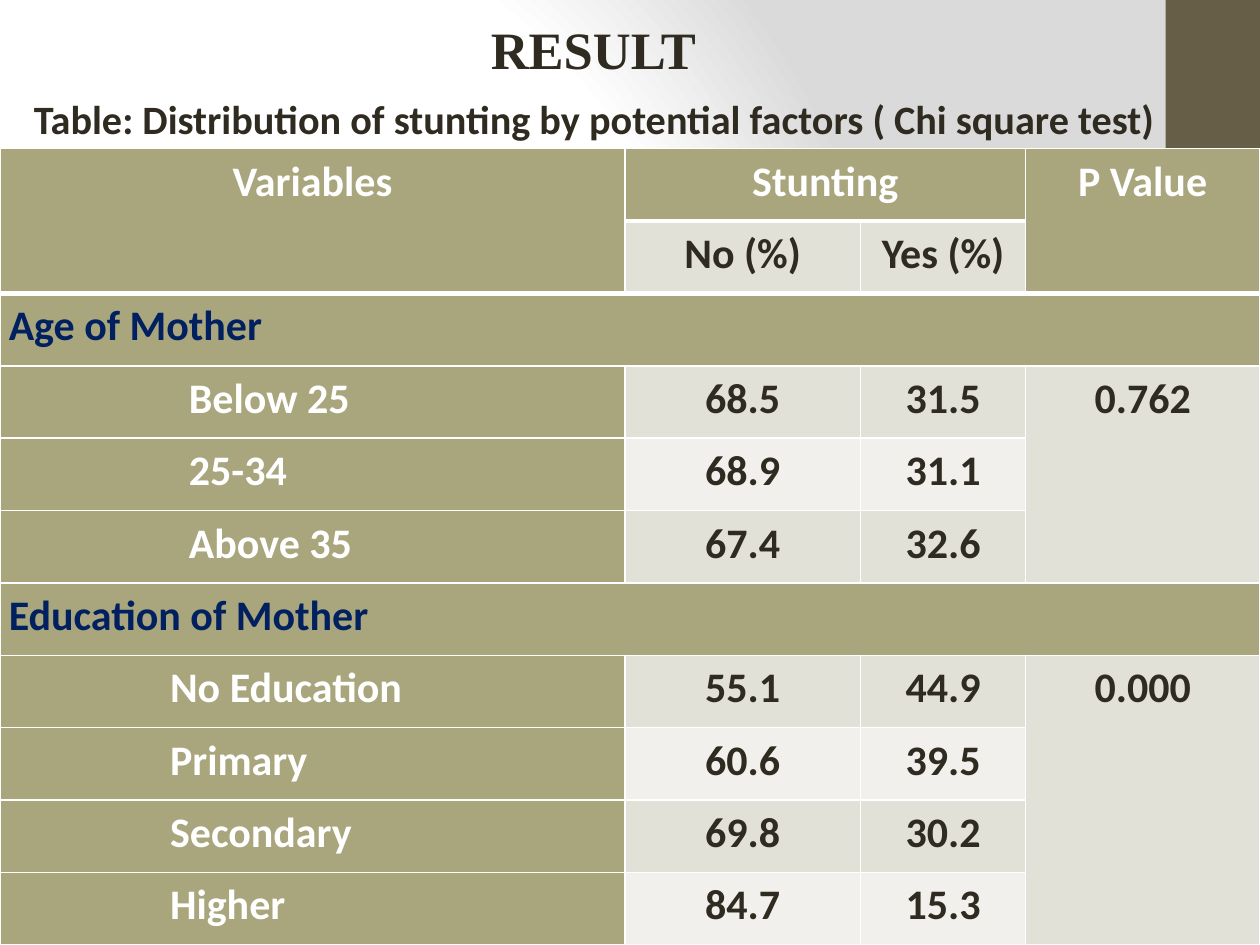
from lxml import etree
from pptx import Presentation
from pptx.dml.color import RGBColor
from pptx.enum.shapes import MSO_SHAPE
from pptx.enum.text import MSO_AUTO_SIZE, PP_ALIGN
from pptx.oxml import parse_xml
from pptx.oxml.ns import nsdecls, qn
from pptx.util import Inches, Pt

WIDTH, HEIGHT = Inches(10), Inches(7.5)
WHITE = RGBColor(0xFF, 0xFF, 0xFF)
MIST = RGBColor(0xDA, 0xDA, 0xDA)
BROWN = RGBColor(0x67, 0x5E, 0x47)
OLIVE = RGBColor(0xA9, 0xA5, 0x7C)
NAVY = RGBColor(0x00, 0x20, 0x60)
INK = RGBColor(0x2F, 0x2B, 0x20)
BAND_DARK = RGBColor(0xE2, 0xE1, 0xD7)
BAND_LIGHT = RGBColor(0xF1, 0xF0, 0xEC)

COLUMN_WIDTHS = (4.96, 1.87, 1.31, 1.86)
TABLE_TOP = 1.18 / 7.5
AGE_INDENT, EDUCATION_INDENT = Inches(1.43), Inches(1.28)
HEADER_ROWS = [
    ("Variables", "Stunting", "", "P Value"),
    ("", "No (%)", "Yes (%)", ""),
]
# heading, indent of its categories, p value, category rows
FACTORS = [
    ("Age of Mother", AGE_INDENT, "0.762", [
        ("Below 25", "68.5", "31.5"),
        ("25-34", "68.9", "31.1"),
        ("Above 35", "67.4", "32.6"),
    ]),
    ("Education of Mother", EDUCATION_INDENT, "0.000", [
        ("No Education", "55.1", "44.9"),
        ("Primary", "60.6", "39.5"),
        ("Secondary", "69.8", "30.2"),
        ("Higher", "84.7", "15.3"),
    ]),
]


def share(left, top, width, height):
    """Turn shares of the slide into lengths."""
    return (int(left * WIDTH), int(top * HEIGHT),
            int(width * WIDTH), int(height * HEIGHT))


def set_background(page):
    stops = "".join(
        f'<a:gs pos="{place * 1000}"><a:srgbClr val="{color}"/></a:gs>'
        for place, color in ((0, WHITE), (75, WHITE), (100, MIST)))
    background = parse_xml(
        f'<p:bg {nsdecls("p", "a")}><p:bgPr><a:gradFill rotWithShape="1">'
        f'<a:gsLst>{stops}</a:gsLst><a:path path="circle">'
        '<a:fillToRect l="20000" t="50000" r="100000" b="50000"/></a:path>'
        '</a:gradFill><a:effectLst/></p:bgPr></p:bg>')
    page.element.cSld.insert(0, background)


def add_side_bar(page):
    bar = page.shapes.add_shape(MSO_SHAPE.RECTANGLE, *share(0.925, 0, 0.075, 1))
    bar.shadow.inherit = False
    bar.fill.solid()
    bar.fill.fore_color.rgb = BROWN
    bar.line.fill.background()


def style_text(para, size, font, color, align):
    para.alignment = align
    for span in para.runs:
        span.font.size = Pt(size)
        span.font.name = font
        span.font.bold = True
        span.font.color.rgb = color


def add_label(page, area, text, size, font, align):
    box = page.shapes.add_textbox(*share(*area))
    box.text_frame.word_wrap = True
    box.text_frame.text = text
    style_text(box.text_frame.paragraphs[0], size, font, INK, align)
    return box.text_frame


def set_borders(cell, bottom):
    properties = cell._tc.get_or_add_tcPr()
    for side, points in (("L", 1), ("R", 1), ("T", 1), ("B", bottom)):
        line = etree.SubElement(properties, qn(f"a:ln{side}"), w=str(Pt(points)))
        fill = etree.SubElement(line, qn("a:solidFill"))
        etree.SubElement(fill, qn("a:srgbClr"), val=str(WHITE))


def fill_cell(cell, text, fill, color, align=PP_ALIGN.CENTER, indent=0, bottom=1):
    set_borders(cell, bottom)
    cell.fill.solid()
    cell.fill.fore_color.rgb = fill
    cell.margin_left = cell.margin_right = Inches(0.07)
    cell.margin_top = cell.margin_bottom = 0
    cell.text_frame.text = text
    para = cell.text_frame.paragraphs[0]
    para.line_spacing = 1.15
    style_text(para, 24, "Calibri", color, align)
    if indent:
        para._p.get_or_add_pPr().set("marL", str(indent))


def fill_header(table):
    for row, texts in enumerate(HEADER_ROWS):
        for column, text in enumerate(texts):
            is_sub_header = row == 1 and column in (1, 2)
            fill, color, bottom = (
                (BAND_DARK, INK, 1) if is_sub_header else (OLIVE, WHITE, 3))
            fill_cell(table.cell(row, column), text, fill, color, bottom=bottom)
    table.cell(0, 0).merge(table.cell(1, 0))
    table.cell(0, 1).merge(table.cell(0, 2))
    table.cell(0, 3).merge(table.cell(1, 3))


def fill_factor(table, top, heading, indent, p_value, categories):
    """Fill a heading row and its categories; return the next free row."""
    for column in range(4):
        fill_cell(table.cell(top, column), "" if column else heading,
                  OLIVE, NAVY, PP_ALIGN.LEFT)
    table.cell(top, 0).merge(table.cell(top, 3))
    first, last = top + 1, top + len(categories)
    for row, (name, *percents) in enumerate(categories, first):
        fill_cell(table.cell(row, 0), name, OLIVE, WHITE, PP_ALIGN.LEFT, indent)
        band = BAND_DARK if row % 2 else BAND_LIGHT
        for column, percent in enumerate(percents, 1):
            fill_cell(table.cell(row, column), percent, band, INK)
        fill_cell(table.cell(row, 3), p_value if row == first else "",
                  BAND_DARK, INK)
    table.cell(first, 3).merge(table.cell(last, 3))
    return last + 1


def add_result_table(page):
    row_count = len(HEADER_ROWS) + sum(1 + len(factor[3]) for factor in FACTORS)
    area = share(0, TABLE_TOP, 1, 1 - TABLE_TOP)
    table = page.shapes.add_table(row_count, len(COLUMN_WIDTHS), *area).table
    for column, width in zip(table.columns, COLUMN_WIDTHS):
        column.width = Inches(width)
    fill_header(table)
    row = len(HEADER_ROWS)
    for factor in FACTORS:
        row = fill_factor(table, row, *factor)


def main():
    deck = Presentation()
    deck.slide_width, deck.slide_height = WIDTH, HEIGHT
    page = deck.slides.add_slide(deck.slide_layouts[6])
    set_background(page)
    add_side_bar(page)
    add_result_table(page)
    caption = add_label(
        page, (0.017, 0.093, 0.925, 0.065),
        "Table: Distribution of stunting by potential factors ( Chi square test)",
        23, "Calibri", PP_ALIGN.LEFT)
    caption.auto_size = MSO_AUTO_SIZE.SHAPE_TO_FIT_TEXT
    title = add_label(page, (0.292, 0.011, 0.358, 0.089), "RESULT",
                      30, "Times New Roman", PP_ALIGN.CENTER)
    title.paragraphs[0].space_before = Pt(4)
    deck.save("out.pptx")


if __name__ == "__main__":
    main()
